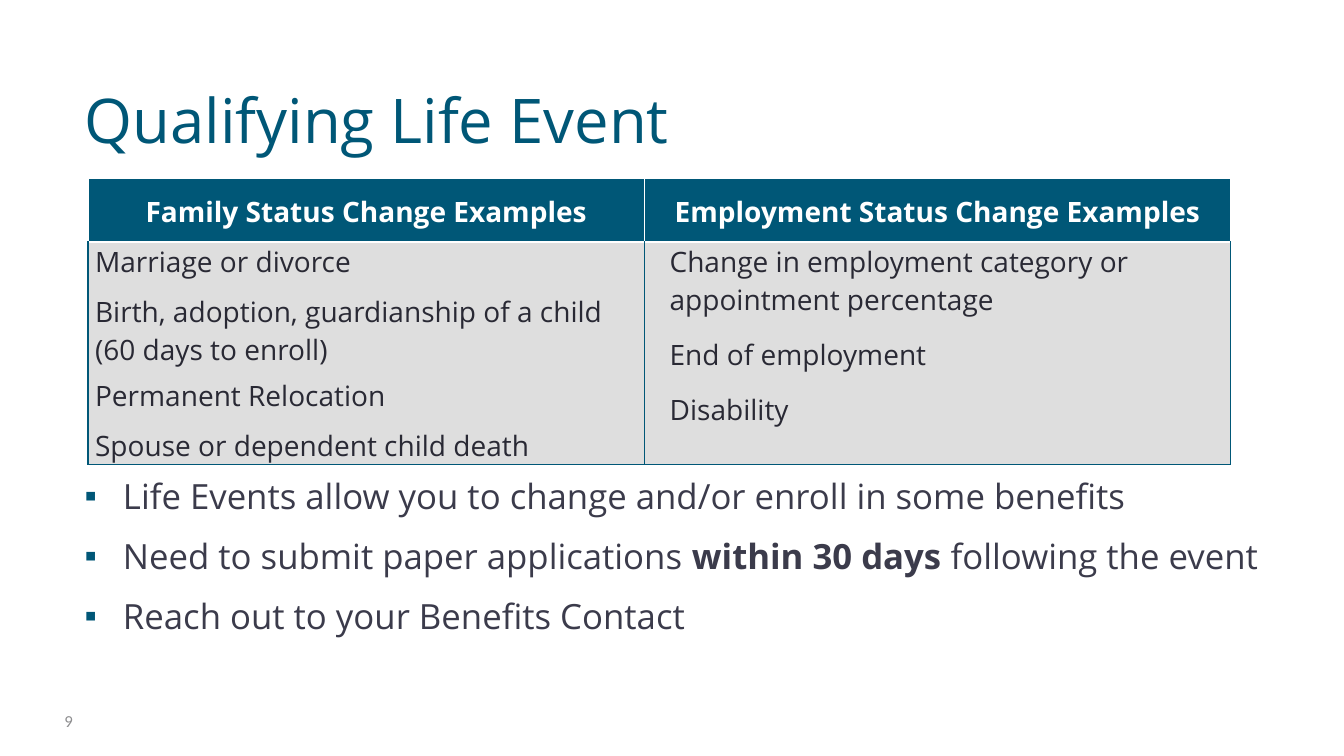
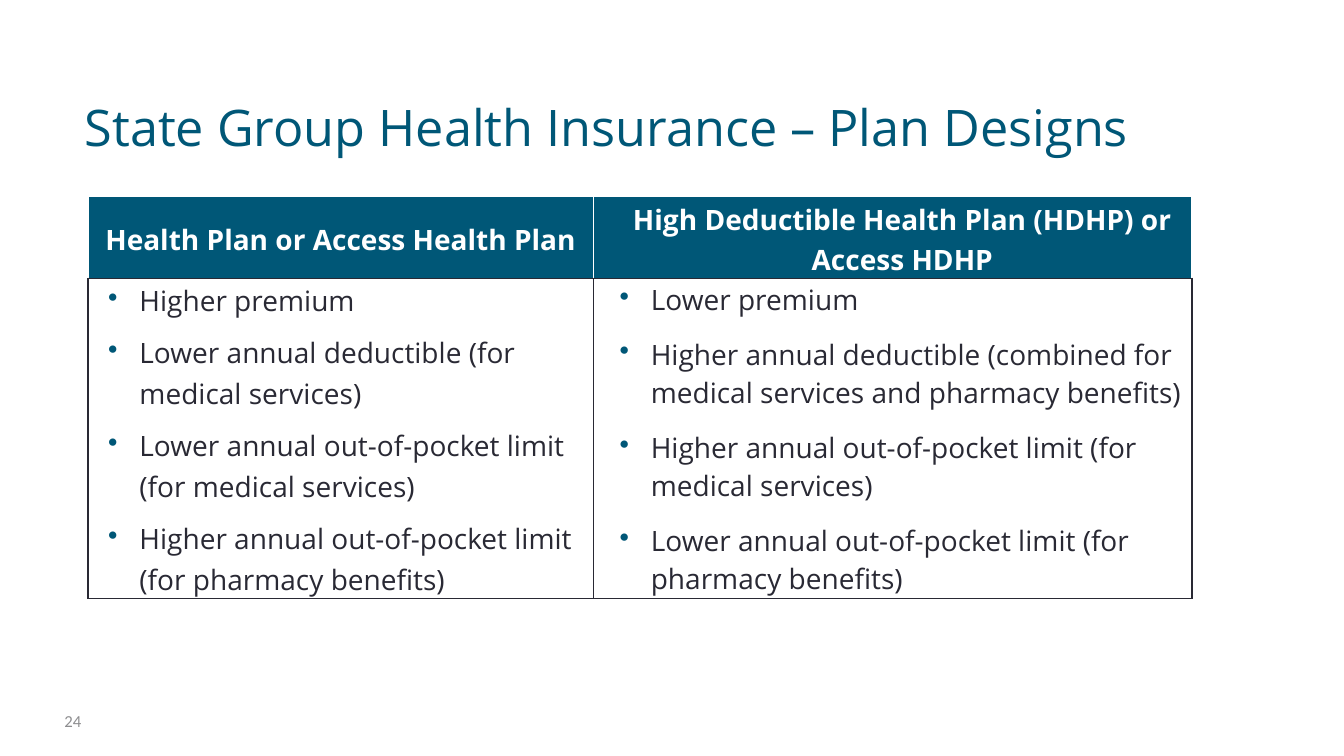
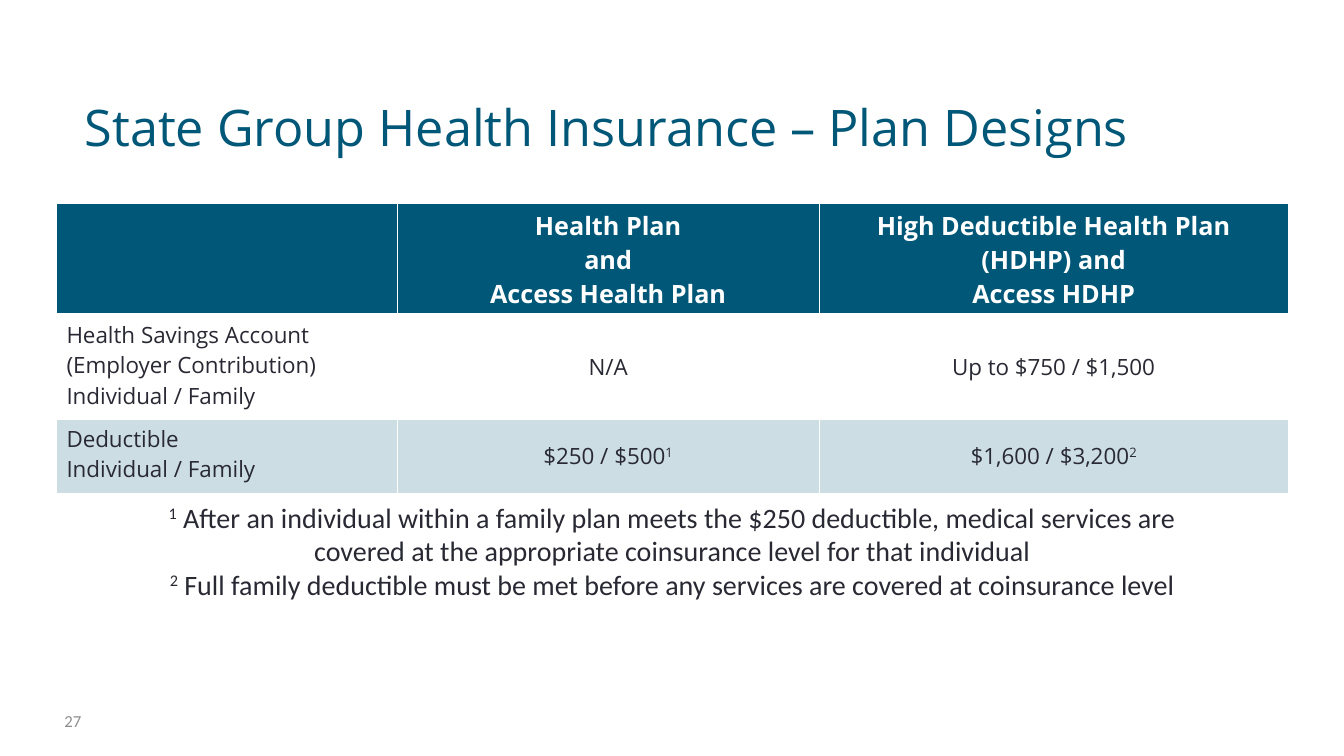
import dataclasses
import itertools

import lxml.etree
import pptx
import pptx.dml.color
import pptx.enum.text
import pptx.oxml.ns
import pptx.util

Align = pptx.enum.text.PP_ALIGN
Anchor = pptx.enum.text.MSO_ANCHOR
qn = pptx.oxml.ns.qn


@dataclasses.dataclass(frozen=True)
class Theme:
    # Colours
    teal: str = "005777"
    pale: str = "CCDDE4"
    grey: str = "DEDEDE"
    white: str = "FFFFFF"
    ink: str = "292934"
    slate: str = "3B3B4B"
    dim: str = "8E8E90"
    # Fonts and type sizes
    main: str = "Open Sans"
    plain: str = "Calibri"
    large: float = 44
    title: float = 36
    points: float = 24.8
    cell: float = 20
    head: float = 18
    small: float = 16
    page: float = 12


@dataclasses.dataclass(frozen=True)
class Type:
    """Look of the text in one box or cell; lengths in inches, gaps in points."""
    size: float
    ink: str
    font: str = Theme.main
    bold: bool = False
    align: Align = Align.LEFT
    left: float = 0
    hang: float = 0
    line: float = 1.0
    before: float = 0
    after: tuple = (0,)
    mark: str = ""


@dataclasses.dataclass(frozen=True)
class Box:
    """Look of one table cell; edges are (colour, points) for L, R, T, B."""
    fill: str
    edges: tuple
    anchor: Anchor = Anchor.MIDDLE
    pad: tuple = (0.07, 0.01, 0.07, 0)


class Deck:
    """Lengths on the slide are percent of its width and height."""

    def __init__(self, theme):
        self.theme = theme
        self.show = pptx.Presentation()
        self.show.slide_width = pptx.util.Inches(13.33)
        self.show.slide_height = pptx.util.Inches(7.5)
        self.slide = None

    def wide(self, share):
        return round(self.show.slide_width * share / 100)

    def high(self, share):
        return round(self.show.slide_height * share / 100)

    def place(self, x, y, w, h):
        return self.wide(x), self.high(y), self.wide(w), self.high(h)

    def move(self, shape, *area):
        shape.left, shape.top, shape.width, shape.height = self.place(*area)

    # Text
    def bullet(self, para, mark):
        props = para._p.get_or_add_pPr()
        tint = lxml.etree.SubElement(props, qn("a:buClr"))
        lxml.etree.SubElement(tint, qn("a:srgbClr"), val=self.theme.teal)
        lxml.etree.SubElement(props, qn("a:buChar"), char=mark)

    def fill(self, frame, paras, look):
        """A paragraph is a string or a list of strings and (text, "bold" or "super")."""
        frame.word_wrap = True
        gaps = itertools.cycle(look.after)
        for i, (runs, gap) in enumerate(zip(paras, gaps)):
            para = frame.add_paragraph() if i else frame.paragraphs[0]
            props = para._p.get_or_add_pPr()
            props.set("marL", str(pptx.util.Inches(look.left)))
            props.set("indent", str(pptx.util.Inches(look.hang)))
            if look.mark:
                self.bullet(para, look.mark)
            para.alignment = look.align
            para.line_spacing = look.line
            para.space_before = pptx.util.Pt(look.before if i else 0)
            para.space_after = pptx.util.Pt(gap)
            for item in [runs] if isinstance(runs, str) else runs:
                text, kind = (item, "") if isinstance(item, str) else item
                run = para.add_run()
                run.text = text
                font = run.font
                font.name = look.font
                font.size = pptx.util.Pt(look.size)
                font.bold = look.bold or kind == "bold"
                font.color.rgb = pptx.dml.color.RGBColor.from_string(look.ink)
                if kind == "super":
                    font._element.set("baseline", "30000")

    # Slide with its title and page number
    def page(self, number, title, size, layout=5):
        theme = self.theme
        self.slide = self.show.slides.add_slide(self.show.slide_layouts[layout])
        shape = self.slide.shapes.title
        self.move(shape, 5.55, 4, 89.57, 16.67)
        frame = shape.text_frame
        frame.auto_size = pptx.enum.text.MSO_AUTO_SIZE.NONE
        frame.vertical_anchor = Anchor.BOTTOM
        frame.margin_bottom = 0
        self.fill(frame, [title], Type(size, theme.teal))
        self.label([str(number)], (4.05, 92.67, 4.2, 5.33),
                   Type(theme.page, theme.dim, theme.plain), Anchor.MIDDLE)

    def label(self, paras, area, look, anchor=Anchor.TOP):
        frame = self.slide.shapes.add_textbox(*self.place(*area)).text_frame
        frame.vertical_anchor = anchor
        self.fill(frame, paras, look)

    def points(self, paras, area):
        shape = self.slide.placeholders[1]
        self.move(shape, *area)
        frame = shape.text_frame
        frame.auto_size = pptx.enum.text.MSO_AUTO_SIZE.NONE
        frame.margin_top = pptx.util.Inches(0.03)
        self.fill(frame, paras, Type(self.theme.points, self.theme.slate, left=0.38,
                                     hang=-0.38, after=(13,), mark="▪"))

    # Table
    def edge(self, cell, edges):
        props = cell._tc.get_or_add_tcPr()
        for side, (tint, width) in zip("LRTB", edges):
            line = lxml.etree.SubElement(props, qn("a:ln" + side),
                                         w=str(pptx.util.Pt(width)))
            fill = lxml.etree.SubElement(line, qn("a:solidFill"))
            lxml.etree.SubElement(fill, qn("a:srgbClr"), val=tint)

    def table(self, x, y, cols, rows, cells):
        """Each cell is (paragraphs, type, box)."""
        area = self.place(x, y, sum(cols), sum(rows))
        table = self.slide.shapes.add_table(len(rows), len(cols), *area).table
        table.horz_banding = False
        for col, share in zip(table.columns, cols):
            col.width = self.wide(share)
        for row, share in zip(table.rows, rows):
            row.height = self.high(share)
        for cell, (paras, look, box) in zip(table.iter_cells(), itertools.chain(*cells)):
            pads = [pptx.util.Inches(pad) for pad in box.pad]
            (cell.margin_left, cell.margin_top,
             cell.margin_right, cell.margin_bottom) = pads
            cell.vertical_anchor = box.anchor
            self.edge(cell, box.edges)
            cell.fill.solid()
            cell.fill.fore_color.rgb = pptx.dml.color.RGBColor.from_string(box.fill)
            self.fill(cell.text_frame, paras, look)


def main():
    theme = Theme()
    deck = Deck(theme)
    thin, thick = (theme.white, 1), (theme.white, 3)
    dark, blue = (theme.ink, 1), (theme.teal, 1)
    head = Type(theme.cell, theme.white, bold=True, align=Align.CENTER,
                line=1.07, after=(8,))
    text = Type(theme.cell, theme.ink)

    # Life events
    deck.page(9, "Qualifying Life Event", theme.large, layout=1)
    deck.points([
        "Life Events allow you to change and/or enroll in some benefits",
        ["Need to submit paper applications ", ("within 30 days ", "bold"),
         "following the event"],
        "Reach out to your Benefits Contact",
    ], (5.55, 62.4, 89.57, 27.2))
    top = Box(theme.teal, (thin,) * 4)
    body = Box(theme.grey, (blue, blue, thin, blue), Anchor.TOP)
    family = dataclasses.replace(text, after=(8, 6))
    work = dataclasses.replace(text, left=0.18, before=6, after=(6,))
    deck.table(6.55, 23.6, (41.4, 43.6), (8.4, 29.4), [
        [(["Family Status Change Examples"], head, top),
         (["Employment Status Change Examples"], head, top)],
        [(["Marriage or divorce",
           "Birth, adoption, guardianship of a child (60 days to enroll)",
           "Permanent Relocation",
           "Spouse or dependent child death"], family, body),
         (["Change in employment category or appointment percentage",
           "End of employment",
           "Disability"], work, body)],
    ])

    # Plan features
    plans = "State Group Health Insurance – Plan Designs"
    deck.page(24, plans, theme.title)
    top = Box(theme.teal, (thin, thin, thin, dark))
    body = Box(theme.white, (dark,) * 4)
    basic = dataclasses.replace(text, left=0.44, hang=-0.31, line=1.07,
                                after=(8,), mark="•")
    saver = dataclasses.replace(text, left=0.5, hang=-0.31, before=6,
                                after=(6,), mark="•")
    deck.table(6.55, 26, (37.6, 44.55), (10.8, 42.4), [
        [(["Health Plan or Access Health Plan"], head, top),
         (["High Deductible Health Plan (HDHP) or Access HDHP"],
          dataclasses.replace(head, left=0.19), top)],
        [(["Higher premium",
           "Lower annual deductible (for medical services)",
           "Lower annual out-of-pocket limit (for medical services)",
           "Higher annual out-of-pocket limit (for pharmacy benefits)"], basic, body),
         (["Lower premium",
           "Higher annual deductible (combined for medical services and pharmacy benefits)",
           "Higher annual out-of-pocket limit (for medical services)",
           "Lower annual out-of-pocket limit (for pharmacy benefits)"], saver, body)],
    ])

    # Plan costs
    deck.page(27, plans, theme.title)
    pad = (0.1, 0.05, 0.1, 0.05)
    top = Box(theme.teal, (thin, thin, thin, thick), Anchor.TOP, pad)
    mid = Box(theme.white, (thin, thin, thick, thick), pad=pad)
    low = Box(theme.pale, (thin, thin, thick, thin), pad=pad)
    head = Type(theme.head, theme.white, bold=True, align=Align.CENTER)
    name = Type(theme.small, theme.ink)
    cost = dataclasses.replace(name, align=Align.CENTER)
    deck.table(4.2, 26.9, (25.35, 31.4, 34.9), (14.7, 13.75, 9.9), [
        [([], head, top),
         (["Health Plan", "and", "Access Health Plan"], head, top),
         (["High Deductible Health Plan (HDHP) and", "Access HDHP"], head, top)],
        [(["Health Savings Account (Employer Contribution)", "Individual / Family"],
          name, dataclasses.replace(mid, anchor=Anchor.TOP)),
         (["N/A"], cost, mid),
         (["Up to $750 / $1,500"], cost, mid)],
        [(["Deductible", "Individual / Family"],
          name, dataclasses.replace(low, anchor=Anchor.TOP)),
         ([["$250 / $500", ("1", "super")]], cost, low),
         ([["$1,600 / $3,200", ("2", "super")]], cost, low)],
    ])
    deck.label([
        [("1", "super"), " After an individual within a family plan meets the $250 "
                         "deductible, medical services are"],
        "covered at the appropriate coinsurance level for that individual",
        [("2", "super"), " Full family deductible must be met before any services "
                         "are covered at coinsurance level"],
    ], (4.2, 65.5, 91.65, 14.8),
        Type(theme.cell, theme.ink, theme.plain, align=Align.CENTER))

    deck.show.save("out.pptx")


if __name__ == "__main__":
    main()
